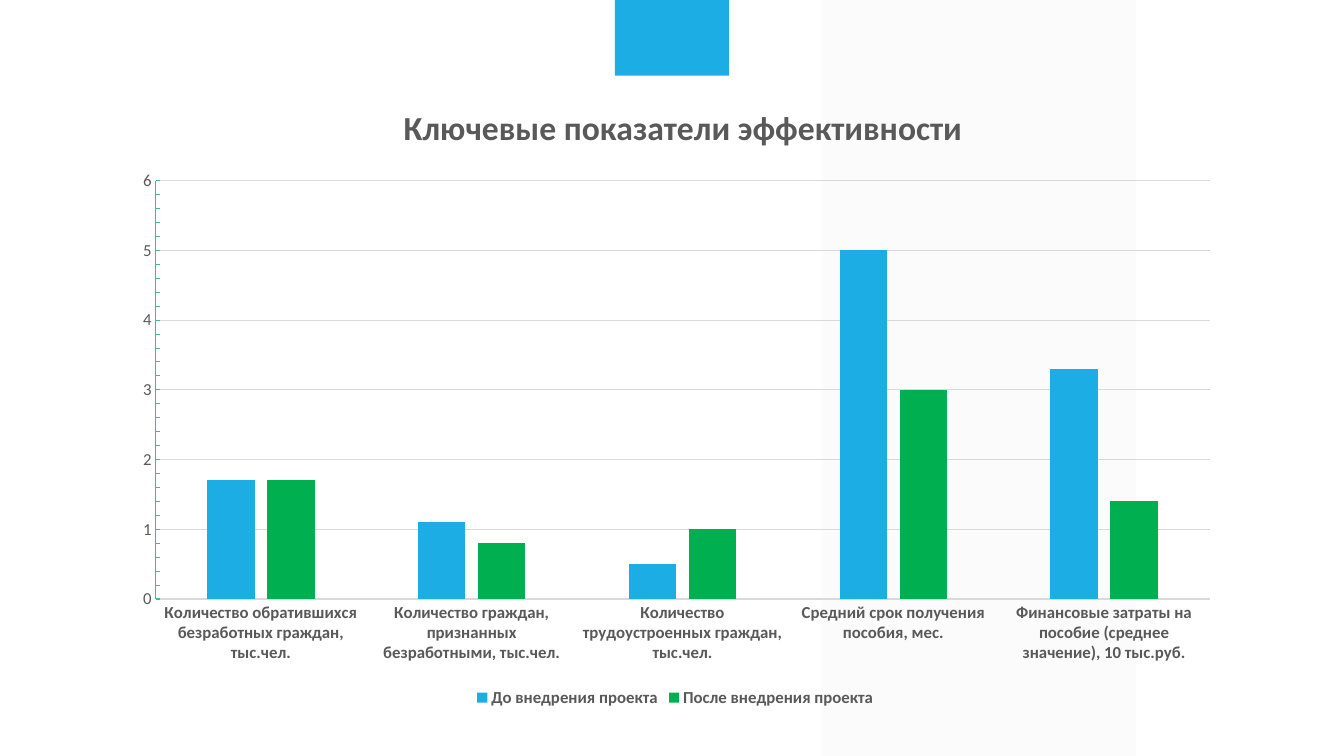
from lxml.etree import SubElement
from pptx import Presentation
from pptx.chart.data import CategoryChartData
from pptx.dml.color import RGBColor
from pptx.enum.chart import XL_CHART_TYPE, XL_LEGEND_POSITION, XL_TICK_MARK
from pptx.enum.shapes import MSO_SHAPE
from pptx.oxml import parse_xml
from pptx.oxml.ns import nsdecls, qn
from pptx.util import Pt

COLORS = {
    "band": "F2F2F2",
    "before": "1CADE4",
    "after": "00B050",
    "text": "595959",
    "grid": "D9D9D9",
    "value_axis": "42BA97",
}
FONT = "Calibri"
TITLE = "Ключевые показатели эффективности"
CATEGORIES = [
    "Количество обратившихся безработных граждан, тыс.чел.",
    "Количество граждан, признанных безработными, тыс.чел.",
    "Количество трудоустроенных граждан, тыс.чел.",
    "Средний срок получения пособия, мес.",
    "Финансовые затраты на пособие (среднее значение), 10 тыс.руб.",
]
SERIES = [
    ("До внедрения проекта", "before", (1.7, 1.1, 0.5, 5, 3.3)),
    ("После внедрения проекта", "after", (1.7, 0.8, 1, 3, 1.4)),
]


def color(name):
    return RGBColor.from_string(COLORS[name])


def add_block(slide, left, top, width, height, color_name, opacity=100):
    shape = slide.shapes.add_shape(
        MSO_SHAPE.RECTANGLE, Pt(left), Pt(top), Pt(width), Pt(height))
    shape.shadow.inherit = False
    shape.line.fill.background()
    shape.fill.solid()
    shape.fill.fore_color.rgb = color(color_name)
    if opacity < 100:
        fill_color = shape.fill._xPr.find(".//" + qn("a:srgbClr"))
        SubElement(fill_color, qn("a:alpha")).set("val", str(opacity * 1000))


def style_font(font, size, bold=False):
    font.name = FONT
    font.size = Pt(size)
    font.bold = bold
    font.color.rgb = color("text")


def style_line(line, color_name):
    line.color.rgb = color(color_name)
    line.width = Pt(0.75)


def manual_layout(**settings):
    """Return a chart layout element; positions are fractions of the chart."""
    items = "".join(f'<c:{name} val="{value}"/>' for name, value in settings.items())
    return parse_xml(
        f'<c:layout {nsdecls("c")}><c:manualLayout>{items}</c:manualLayout></c:layout>')


def set_title(chart):
    chart.has_title = True
    paragraph = chart.chart_title.text_frame.paragraphs[0]
    paragraph.text = TITLE
    style_font(paragraph.font, 24, bold=True)
    title = chart.chart_title._element
    for layout in title.findall(qn("c:layout")):
        title.remove(layout)
    title.find(qn("c:tx")).addnext(
        manual_layout(xMode="edge", yMode="edge", x=0.25, y=0.03))


def place_plot(chart):
    plot_area = chart._chartSpace.chart.plotArea
    for layout in plot_area.findall(qn("c:layout")):
        plot_area.remove(layout)
    plot_area.insert(0, manual_layout(
        layoutTarget="inner", xMode="edge", yMode="edge",
        x=0.032, y=0.16, w=0.949, h=0.662))


def style_axes(chart):
    category_axis, value_axis = chart.category_axis, chart.value_axis
    for axis, line_color, bold in (
            (category_axis, "grid", True), (value_axis, "value_axis", False)):
        axis.major_tick_mark = XL_TICK_MARK.NONE
        axis.minor_tick_mark = XL_TICK_MARK.NONE
        style_font(axis.tick_labels.font, 12, bold)
        style_line(axis.format.line, line_color)
    value_axis.minor_tick_mark = XL_TICK_MARK.INSIDE
    value_axis.minimum_scale, value_axis.maximum_scale = 0, 6
    value_axis.major_unit, value_axis.minor_unit = 1, 0.2
    value_axis.has_major_gridlines = True
    style_line(value_axis.major_gridlines.format.line, "grid")


def add_indicator_chart(slide):
    data = CategoryChartData()
    data.categories = CATEGORIES
    for name, _, values in SERIES:
        data.add_series(name, values)
    chart = slide.shapes.add_chart(
        XL_CHART_TYPE.COLUMN_CLUSTERED,
        Pt(85.7), Pt(56.9), Pt(793.4), Pt(451.4), data).chart
    style_font(chart.font, 10)
    plot = chart.plots[0]
    plot.gap_width, plot.overlap = 219, -27
    plot.vary_by_categories = False
    for series, (_, color_name, _) in zip(plot.series, SERIES):
        series.format.fill.solid()
        series.format.fill.fore_color.rgb = color(color_name)
    set_title(chart)
    place_plot(chart)
    style_axes(chart)
    chart.has_legend = True
    chart.legend.position = XL_LEGEND_POSITION.BOTTOM
    chart.legend.include_in_layout = False
    style_font(chart.legend.font, 12, bold=True)


def main():
    presentation = Presentation()
    presentation.slide_width, presentation.slide_height = Pt(960), Pt(540)
    slide = presentation.slides.add_slide(presentation.slide_layouts[6])
    add_block(slide, 586.8, 0, 224.6, 540, "band", opacity=30)
    add_block(slide, 439.2, 0, 81.4, 54, "before")
    add_indicator_chart(slide)
    presentation.save("out.pptx")


if __name__ == "__main__":
    main()
